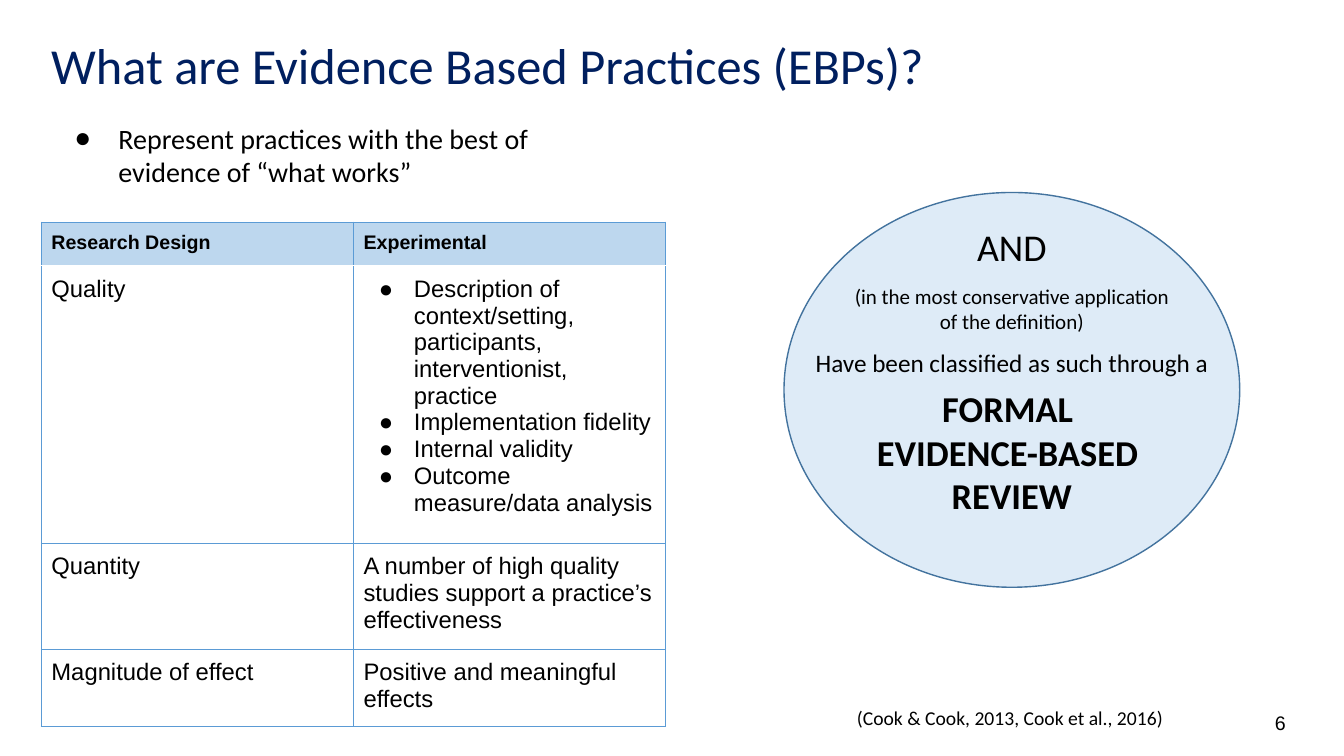
from lxml import etree
from pptx import Presentation
from pptx.dml.color import RGBColor
from pptx.enum.shapes import MSO_SHAPE
from pptx.enum.text import MSO_ANCHOR, PP_ALIGN
from pptx.oxml.ns import qn
from pptx.util import Pt

LEFT, CENTER = PP_ALIGN.LEFT, PP_ALIGN.CENTER
TOP = MSO_ANCHOR.TOP
ELLIPSE = MSO_SHAPE.OVAL

COLORS = {
    "black": "000000", "white": "FFFFFF", "title": "001F5F",
    "header": "BDD7EE", "grid": "5B9BD5",
    "ellipse": "DEEBF7", "outline": "43739E",
}
ROWS = [
    ("Research Design", ["Experimental"]),
    ("Quality", [
        "Description of context/setting, participants, interventionist, practice",
        "Implementation fidelity",
        "Internal validity",
        "Outcome measure/data analysis",
    ]),
    ("Quantity", ["A number of high quality studies support a practice’s effectiveness"]),
    ("Magnitude of effect", ["Positive and meaningful effects"]),
]
ROW_HEIGHTS = [31, 187, 72, 53]
COLUMN_WIDTH = 223
CLAIMS = [  # text, size, bold, space before, space after
    ("AND", 27, False, 0, 0),
    (" (in the most conservative application \vof the definition)", 15, False, 10, 0),
    ("Have been classified as such through a", 18, False, 10, 6),
    ("FORMAL ", 26, True, 0, 0),
    ("EVIDENCE-BASED \vREVIEW", 26, True, 0, 0),
]


def rgb(name):
    return RGBColor.from_string(COLORS[name])


def add_text(frame, text, size=14, font="Calibri", color="black", bold=False,
             align=LEFT, before=0, after=0, spacing=1.0, bullet=None):
    """Append a paragraph; bullet is (text indent, hanging indent) in points."""
    para = frame.paragraphs[0]
    if para.text:
        para = frame.add_paragraph()
    para.text = text
    para.alignment = align
    para.space_before, para.space_after = Pt(before), Pt(after)
    para.line_spacing = spacing
    for span in para.runs:
        span.font.name, span.font.size, span.font.bold = font, Pt(size), bold
        span.font.color.rgb = rgb(color)
    if bullet:
        indent, hanging = bullet
        properties = para._p.get_or_add_pPr()
        properties.set("marL", str(Pt(indent)))
        properties.set("indent", str(-Pt(hanging)))
        etree.SubElement(properties, qn("a:buFont")).set("typeface", "Arial")
        etree.SubElement(properties, qn("a:buChar")).set("char", "●")


def add_box(page, left, top, width, height, insets):
    box = page.shapes.add_textbox(Pt(left), Pt(top), Pt(width), Pt(height))
    frame = box.text_frame
    frame.word_wrap = True
    frame.vertical_anchor = TOP
    (frame.margin_left, frame.margin_top,
     frame.margin_right, frame.margin_bottom) = map(Pt, insets)
    return frame


def add_ellipse(page, left, top, width, height):
    ellipse = page.shapes.add_shape(ELLIPSE, Pt(left), Pt(top), Pt(width), Pt(height))
    ellipse.shadow.inherit = False
    ellipse.fill.solid()
    ellipse.fill.fore_color.rgb = rgb("ellipse")
    ellipse.line.color.rgb = rgb("outline")
    ellipse.line.width = Pt(1)


def set_borders(cell, edges):
    """Draw the borders ahead of the fill, as the file format orders them."""
    properties = cell._tc.get_or_add_tcPr()
    for position, (side, (color, width)) in enumerate(edges.items()):
        line = etree.Element(qn("a:ln" + side), w=str(Pt(width)))
        fill = etree.SubElement(line, qn("a:solidFill"))
        etree.SubElement(fill, qn("a:srgbClr"), val=COLORS[color])
        properties.insert(position, line)


def add_design_table(page, left, top):
    table = page.shapes.add_table(len(ROWS), 2, Pt(left), Pt(top),
                                  Pt(2 * COLUMN_WIDTH), Pt(sum(ROW_HEIGHTS))).table
    table.horz_banding = False
    for column in table.columns:
        column.width = Pt(COLUMN_WIDTH)
    for index, (label, details) in enumerate(ROWS):
        table.rows[index].height = Pt(ROW_HEIGHTS[index])
        header = index == 0
        edges = dict.fromkeys("LRTB", ("grid", 0.5))
        if index < 2:
            edges["B" if header else "T"] = ("white", 1)
        for cell, texts in zip(table.rows[index].cells, ([label], details)):
            cell.margin_left = cell.margin_right = Pt(7.2)
            cell.margin_top = cell.margin_bottom = Pt(7.2)
            cell.fill.solid()
            cell.fill.fore_color.rgb = rgb("header" if header else "white")
            set_borders(cell, edges)
            for text in texts:
                add_text(cell.text_frame, text, size=14 if header else 17,
                         font="Arial", bold=header,
                         bullet=(36, 25) if len(texts) > 1 else None)


def main():
    deck = Presentation()
    deck.slide_width, deck.slide_height = Pt(960), Pt(540)
    page = deck.slides.add_slide(deck.slide_layouts[6])

    # Circle with the formal definition
    add_ellipse(page, 560, 137.5, 325.5, 282)
    definition = add_box(page, 560, 150.5, 325.5, 307.5, (9.4, 9.4, 9.4, 9.4))
    for text, size, bold, before, after in CLAIMS:
        add_text(definition, text, size=size, bold=bold, align=CENTER,
                 before=before, after=after)

    # Research criteria
    add_design_table(page, 29.5, 158.5)

    # Heading and lead statement
    lead = add_box(page, 29.5, 52.5, 420, 90, (7.2, 34, 7.2, 3.6))
    add_text(lead, "Represent practices with the best of evidence of “what works”",
             size=20, bullet=(48, 31.5))
    title = add_box(page, 29.5, 26, 878.5, 72, (7.2, 3.6, 7.2, 3.6))
    add_text(title, "What are Evidence Based Practices (EBPs)?", size=36,
             color="title", spacing=0.9)

    # Citation and page number
    citation = add_box(page, 540.5, 497, 362, 31.5, (7.2, 7.2, 7.2, 7.2))
    add_text(citation, "(Cook & Cook, 2013, Cook et al., 2016)", align=CENTER)
    number = add_box(page, 903.5, 504.5, 43, 24.5, (7.2, 3.6, 7.2, 3.6))
    add_text(number, "6", font="Arial")

    deck.save("out.pptx")


if __name__ == "__main__":
    main()
